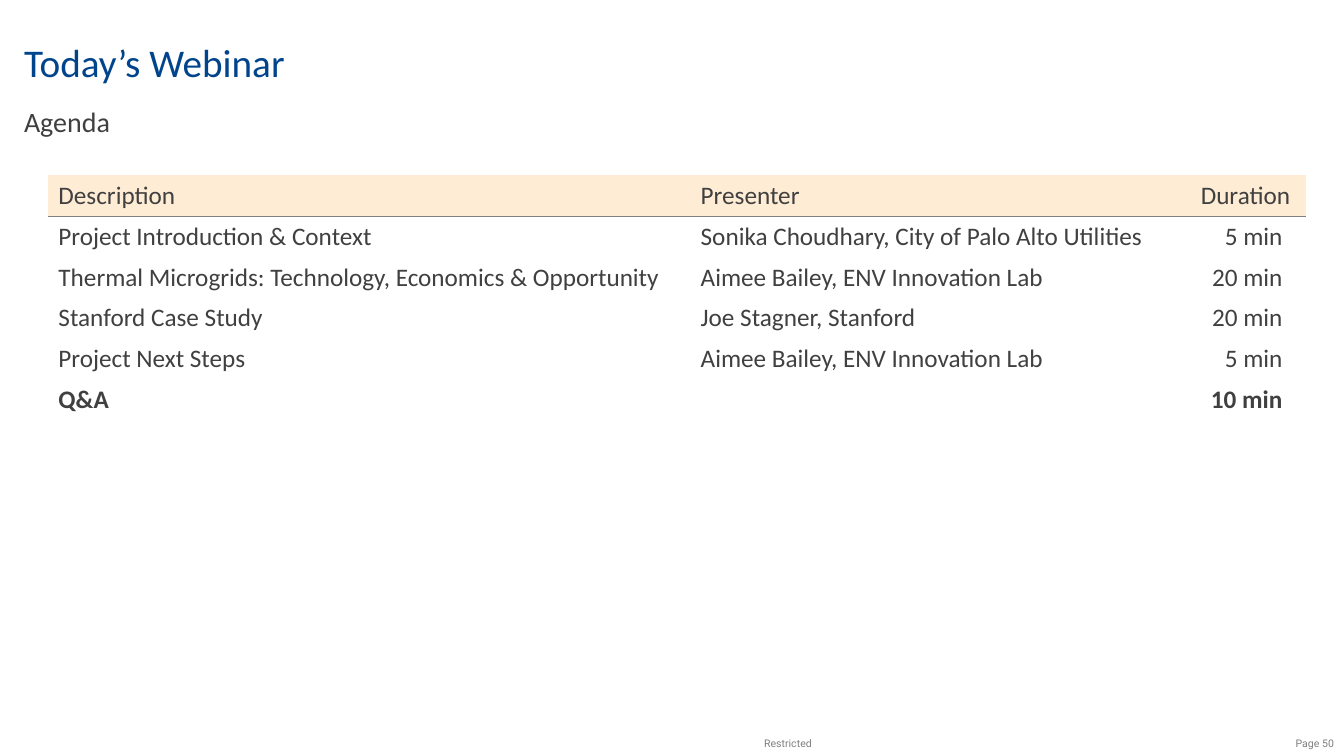
import pptx
import pptx.dml.color
import pptx.enum.text
import pptx.oxml
import pptx.oxml.ns
import pptx.util

Inches = pptx.util.Inches
ALIGN = pptx.enum.text.PP_ALIGN
ANCHOR = pptx.enum.text.MSO_ANCHOR

NO_GRID_STYLE = "{2D5ABB26-0587-4C30-8999-92F81FD0307C}"
DARK, GRAY = "404040", "808080"
COLUMN_WIDTHS = (6.37, 4.96, 1.14)
ROW_HEIGHT = 0.405
AGENDA = (
    ("Description", "Presenter", "Duration"),
    ("Project Introduction & Context", "Sonika Choudhary, City of Palo Alto Utilities", "5 min"),
    ("Thermal Microgrids: Technology, Economics & Opportunity", "Aimee Bailey, ENV Innovation Lab", "20 min"),
    ("Stanford Case Study", "Joe Stagner, Stanford", "20 min"),
    ("Project Next Steps", "Aimee Bailey, ENV Innovation Lab", "5 min"),
    ("Q&A", "", "10 min"),
)


def rgb(value):
    return pptx.dml.color.RGBColor.from_string(value)


def style_text(paragraph, size, color, font="Calibri", bold=False):
    paragraph.font.size = pptx.util.Pt(size)
    for run in paragraph.runs:
        run.font.name = font
        run.font.size = pptx.util.Pt(size)
        run.font.bold = bold
        run.font.color.rgb = rgb(color)


def add_label(slide, text, box, size, color, font="Calibri", align=ALIGN.LEFT):
    frame = slide.shapes.add_textbox(*map(Inches, box)).text_frame
    frame.word_wrap = True
    frame.vertical_anchor = ANCHOR.MIDDLE
    frame.text = text
    frame.paragraphs[0].alignment = align
    style_text(frame.paragraphs[0], size, color, font)


def add_bottom_border(cell, color):
    border = pptx.oxml.parse_xml(
        f'<a:lnB {pptx.oxml.ns.nsdecls("a")} w="12700"><a:solidFill>'
        f'<a:srgbClr val="{color}"/></a:solidFill></a:lnB>'
    )
    cell._tc.get_or_add_tcPr().append(border)


def add_agenda(slide):
    table = slide.shapes.add_table(
        len(AGENDA), len(COLUMN_WIDTHS), Inches(0.48), Inches(1.74),
        Inches(sum(COLUMN_WIDTHS)), Inches(ROW_HEIGHT * len(AGENDA)),
    ).table
    table.first_row = False
    table.horz_banding = False
    table._tbl.tblPr.find(pptx.oxml.ns.qn("a:tableStyleId")).text = NO_GRID_STYLE
    for column, width in zip(table.columns, COLUMN_WIDTHS):
        column.width = Inches(width)
    for row, entries in enumerate(AGENDA):
        table.rows[row].height = Inches(ROW_HEIGHT)
        for column, entry in enumerate(entries):
            cell = table.cell(row, column)
            cell.text = entry
            style_text(cell.text_frame.paragraphs[0], 18, DARK, bold=entries[0] == "Q&A")
            if row == 0:
                add_bottom_border(cell, "7F7F7F")
                cell.fill.solid()
                cell.fill.fore_color.rgb = rgb("FFECD5")
            else:
                cell.fill.background()
                if column == 2:
                    cell.margin_right = Inches(0.23)
                    cell.text_frame.paragraphs[0].alignment = ALIGN.RIGHT


def main():
    deck = pptx.Presentation()
    deck.slide_width, deck.slide_height = Inches(13.33), Inches(7.5)
    slide = deck.slides.add_slide(deck.slide_layouts[6])
    add_label(slide, "Restricted", (7.48, 7.26, 1, 0.23), 7.5, GRAY, "Roboto")
    add_label(slide, "Page 50", (12.33, 7.26, 1, 0.23), 7.5, GRAY, "Roboto", ALIGN.RIGHT)
    add_label(slide, "Today’s Webinar", (0.14, 0.31, 12.97, 0.6), 28, "00448C")
    add_label(slide, "Agenda", (0.14, 0.98, 1.07, 0.44), 20, DARK)
    add_agenda(slide)
    deck.save("out.pptx")


if __name__ == "__main__":
    main()
